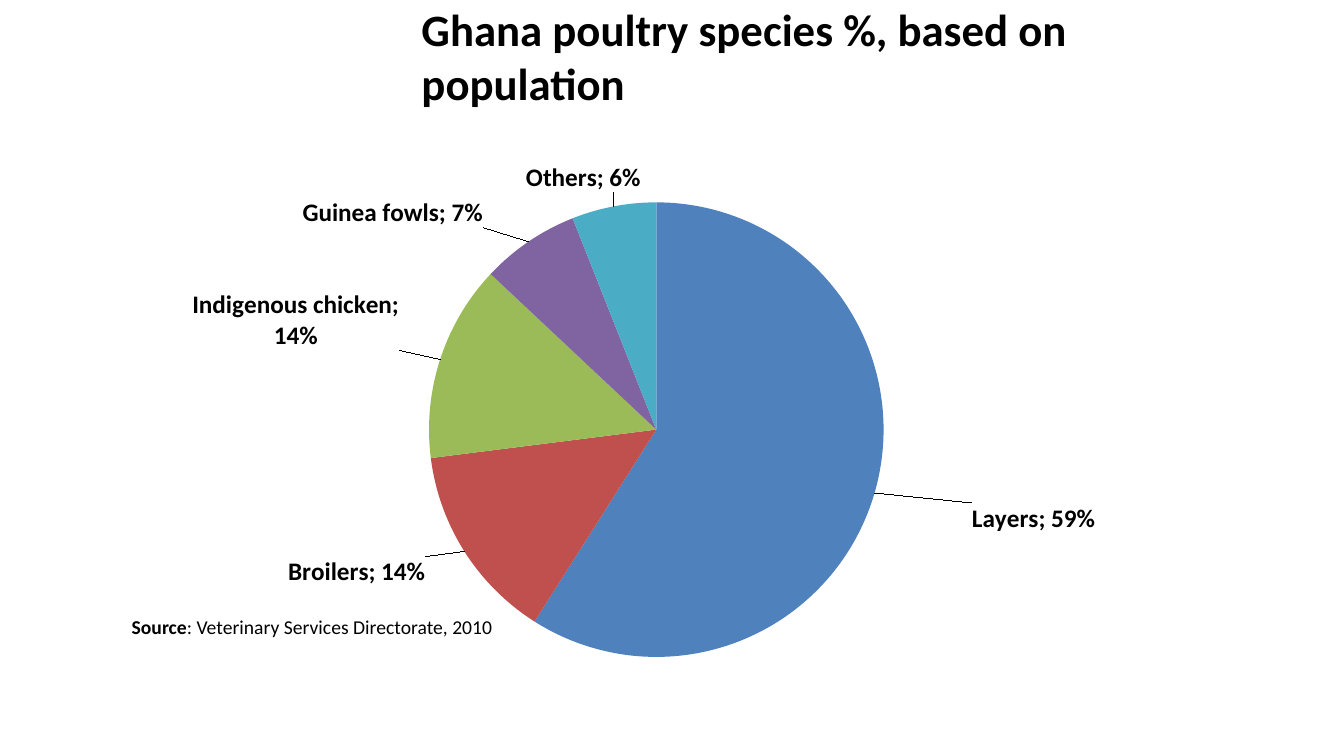
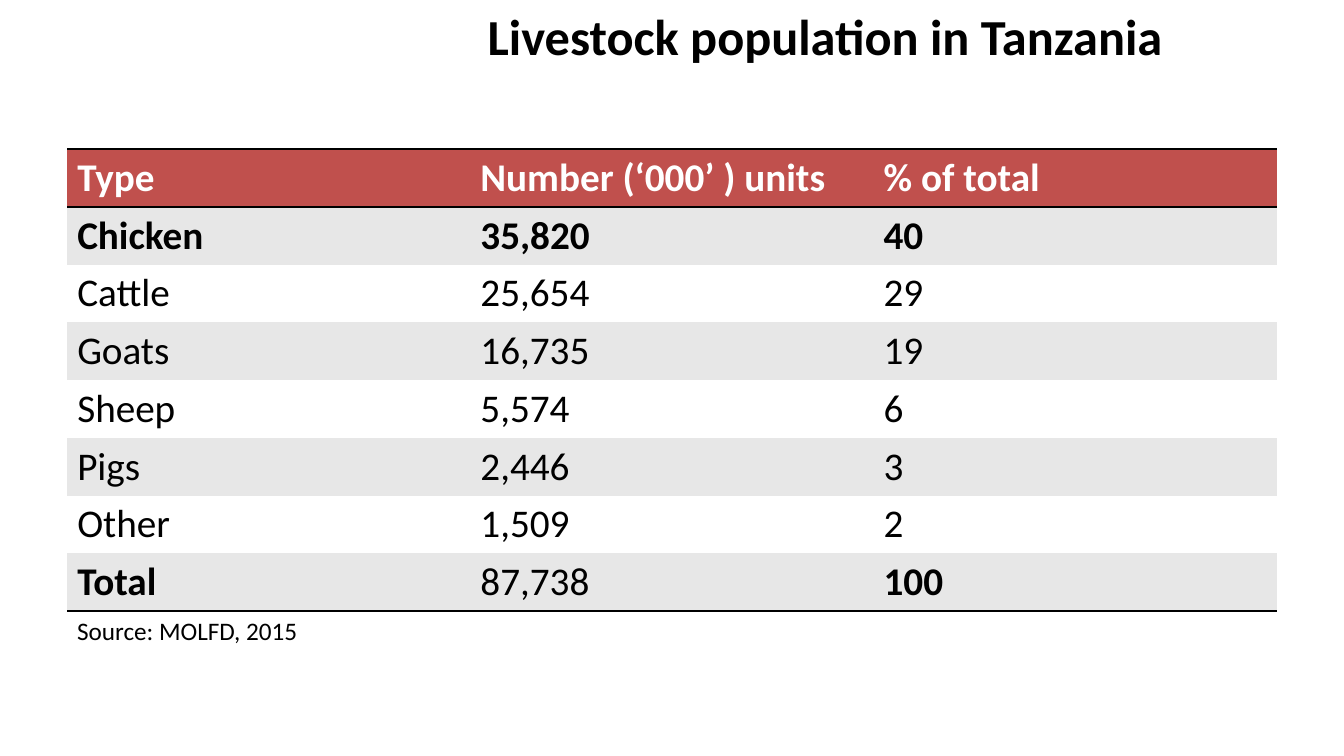
"""Two slides on poultry and livestock: a pie chart and a table."""
from copy import deepcopy

from lxml import etree
from pptx import Presentation
from pptx.chart.data import CategoryChartData
from pptx.dml.color import RGBColor
from pptx.enum.chart import XL_CHART_TYPE, XL_LABEL_POSITION
from pptx.enum.text import MSO_AUTO_SIZE, PP_ALIGN
from pptx.oxml import parse_xml
from pptx.oxml.ns import qn
from pptx.util import Pt

PIE = XL_CHART_TYPE.PIE
OUT_END = XL_LABEL_POSITION.OUTSIDE_END
GROW = MSO_AUTO_SIZE.SHAPE_TO_FIT_TEXT
LEFT, CENTER = PP_ALIGN.LEFT, PP_ALIGN.CENTER

PX = 9525
BLACK = RGBColor(0, 0, 0)
WHITE = RGBColor(255, 255, 255)
GREY = RGBColor(0xE7, 0xE7, 0xE7)
BLUE = RGBColor(0x4F, 0x81, 0xBD)
RED = RGBColor(0xC0, 0x50, 0x4D)
GREEN = RGBColor(0x9B, 0xBB, 0x59)
PURPLE = RGBColor(0x80, 0x64, 0xA2)
TEAL = RGBColor(0x4B, 0xAC, 0xC6)
FONT = "Calibri"
NO_STYLE = "{2D5ABB26-0587-4C30-8999-92F81FD0307C}"
LINE = ('<a:{} xmlns:a="http://schemas.openxmlformats.org/drawingml/2006/main" w="25400">'
        '<a:solidFill><a:srgbClr val="000000"/></a:solidFill></a:{}>')

TITLES = [
    ("Ghana poultry species %, based on population", (392, -3, 820, 120), 32, LEFT),
    ("Livestock population in Tanzania", (390, 0, 792, 120), 36, CENTER),
]
NOTES = [
    ([("Source", True), (": Veterinary Services Directorate, 2010", False)],
     (116, 581, 366, 33), 14),
    ([("Source: MOLFD, 2015", False)], (64, 581, 231, 38), 18),
]
CHART = (27, 147, 1119, 492)
DISC = (382, 46, 433, 433)
SHARES = [
    ("Layers", 0.59, BLUE, (87, 8)),
    ("Broilers", 0.14, RED, (-33, 2)),
    ("Indigenous chicken", 0.14, GREEN, (-34, -7)),
    ("Guinea fowls", 0.07, PURPLE, (-40, -9)),
    ("Others", 0.06, TEAL, (27, -8)),
]
TABLE = (64, 142, 1152, 440)
ROWS = [
    ("Type", "Number (‘000’ ) units", "% of total"),
    ("Chicken", "35,820", "40"),
    ("Cattle", "25,654", "29"),
    ("Goats", "16,735", "19"),
    ("Sheep", "5,574", "6"),
    ("Pigs", "2,446", "3"),
    ("Other", "1,509", "2"),
    ("Total", "87,738", "100"),
]


def scale(box):
    return [n * PX for n in box]


def style(font, size, bold=False, color=BLACK):
    for key, val in {"name": FONT, "size": Pt(size), "bold": bold}.items():
        setattr(font, key, val)
    font.color.rgb = color


def add_text(slide, runs, box, size, wrap=True, align=LEFT):
    frame = slide.shapes.add_textbox(*scale(box)).text_frame
    frame.word_wrap = wrap
    if not wrap:
        frame.auto_size = GROW
    para = frame.paragraphs[0]
    para.alignment = align
    for text, bold in runs:
        run = para.add_run()
        run.text = text
        style(run.font, size, bold)


def add_node(parent, tag, val=None):
    node = etree.SubElement(parent, qn(tag))
    if val is not None:
        node.set("val", str(val))
    return node


def add_layout(parent, parts):
    node = add_node(add_node(parent, "c:layout"), "c:manualLayout")
    for tag, val in parts:
        add_node(node, "c:" + tag, val)
    return node.getparent()


def set_labels(series):
    labels = series.data_labels
    formats = {"show_value": True, "show_category_name": True, "show_percentage": False,
               "number_format": "0%", "number_format_is_linked": False,
               "position": OUT_END}
    for key, val in formats.items():
        setattr(labels, key, val)
    style(labels.font, 18, True)
    root = labels._element
    mark = add_node(root, "c:separator")
    mark.text = "; "
    root.find(qn("c:showBubbleSize")).addnext(mark)
    base = [n for n in root if n.tag != qn("c:showLeaderLines")]
    for i, (_, _, _, (dx, dy)) in enumerate(SHARES):
        label = add_node(root, "c:dLbl")
        add_node(label, "c:idx", i)
        add_layout(label, [("x", round(dx / CHART[2], 3)), ("y", round(dy / CHART[3], 3))])
        label.extend(deepcopy(base))
        root.insert(i, label)


def add_pie(slide):
    data = CategoryChartData(number_format="0%")
    data.categories = [share[0] for share in SHARES]
    data.add_series("Series 1", [share[1] for share in SHARES])
    chart = slide.shapes.add_chart(PIE, *scale(CHART), data).chart
    chart.has_title = chart.has_legend = False
    style(chart.font, 10)
    plot = chart.plots[0]
    plot.vary_by_categories = True
    series = plot.series[0]
    for i, share in enumerate(SHARES):
        fill = series.points[i].format.fill
        fill.solid()
        fill.fore_color.rgb = share[2]
    set_labels(series)
    area = chart._chartSpace.find(".//" + qn("c:plotArea"))
    for old in area.findall(qn("c:layout")):
        area.remove(old)
    parts = [("layoutTarget", "inner"), ("xMode", "edge"), ("yMode", "edge")]
    parts += [(tag, round(n / CHART[2 + i % 2], 3))
              for i, (tag, n) in enumerate(zip("xywh", DISC))]
    area.insert(0, add_layout(area, parts))


def add_table(slide):
    last = len(ROWS) - 1
    frame = slide.shapes.add_table(len(ROWS), len(ROWS[0]), *scale(TABLE))
    table = frame.table
    table._tbl.tblPr.find(qn("a:tableStyleId")).text = NO_STYLE
    for r, row in enumerate(ROWS):
        sides = {0: ["lnT", "lnB"], last: ["lnB"]}.get(r, [])
        for c, text in enumerate(row):
            cell = table.cell(r, c)
            cell.text = text
            bold = r < 2 or (r == last and c != 1)
            font = cell.text_frame.paragraphs[0].runs[0].font
            style(font, 28, bold, BLACK if r else WHITE)
            props = cell._tc.get_or_add_tcPr()
            for side in sides:
                props.append(parse_xml(LINE.format(side, side)))
            cell.fill.solid()
            cell.fill.fore_color.rgb = (GREY if r % 2 else WHITE) if r else RED


def main():
    deck = Presentation()
    deck.slide_width, deck.slide_height = scale((1280, 720))
    for title, note, body in zip(TITLES, NOTES, (add_pie, add_table)):
        slide = deck.slides.add_slide(deck.slide_layouts[6])
        text, box, size, align = title
        add_text(slide, [(text, True)], box, size, align=align)
        body(slide)
        add_text(slide, *note, wrap=False)
    deck.save("out.pptx")


if __name__ == "__main__":
    main()
